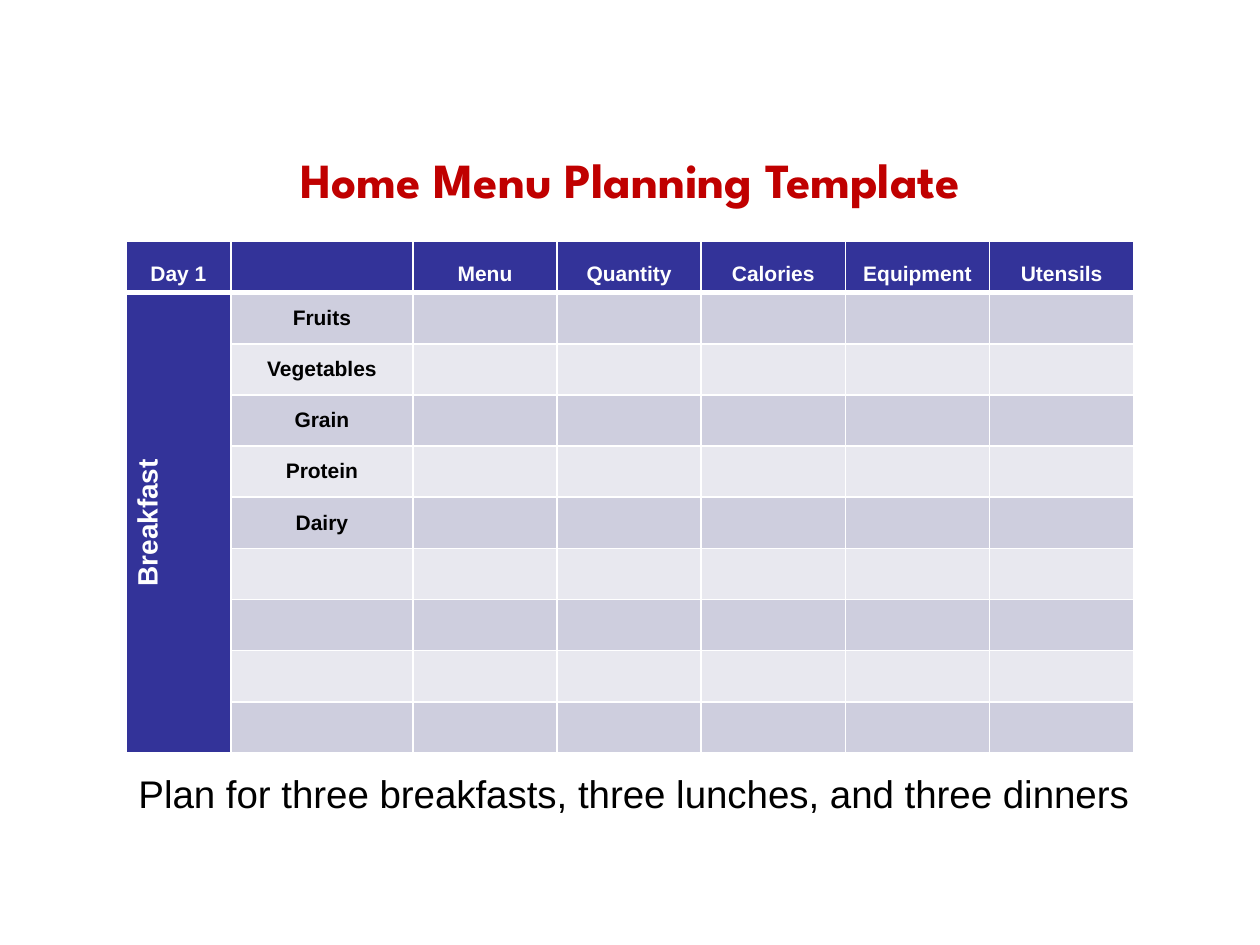
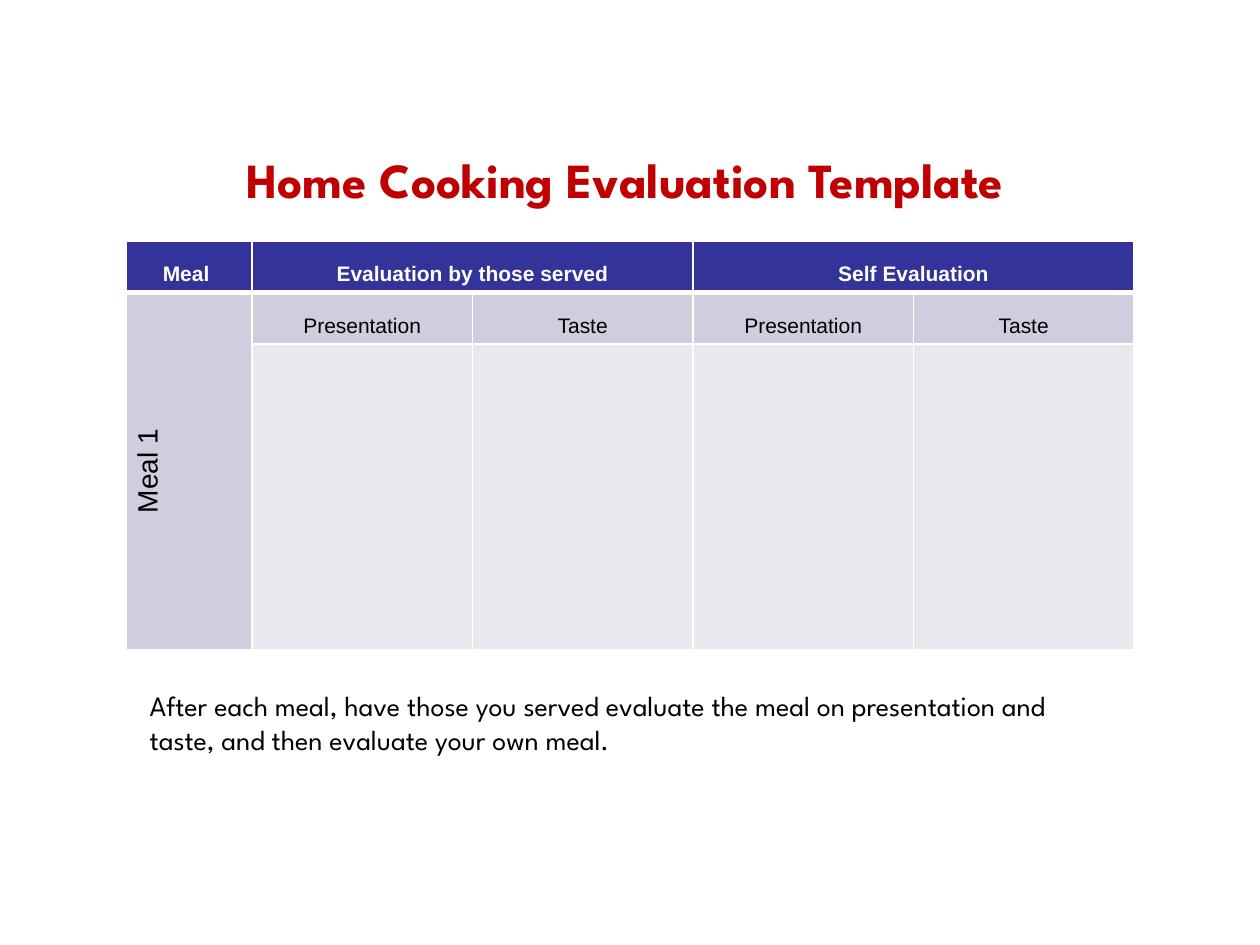
from dataclasses import dataclass

import lxml.etree
import pptx
import pptx.dml.color
import pptx.enum.text
import pptx.oxml.ns
import pptx.presentation
import pptx.slide
import pptx.table
import pptx.text.text
import pptx.util

Pt = pptx.util.Pt
RGBColor = pptx.dml.color.RGBColor
Anchor = pptx.enum.text.MSO_ANCHOR
Align = pptx.enum.text.PP_ALIGN

WHITE = RGBColor(0xFF, 0xFF, 0xFF)
BLACK = RGBColor(0, 0, 0)
TITLE_RED = RGBColor(0xC0, 0, 0)
HEADING_NAVY = RGBColor(0x33, 0x33, 0x99)
BANDS = (RGBColor(0xE8, 0xE8, 0xEF), RGBColor(0xCE, 0xCE, 0xDE))

TITLE_FONT = "League Spartan"
TABLE_FONT = "Arial"
TITLE_TOP, TITLE_HEIGHT = 72, 60
TABLE_LEFT, TABLE_TOP = 72, 138
ROW_HEIGHT = 29.25
THIN_RULE, HEADING_RULE = 1, 3


@dataclass(frozen=True)
class TextStyle:
    size: float
    color: RGBColor
    font: str = TABLE_FONT
    bold: bool = False


@dataclass(frozen=True)
class Box:
    left: float
    top: float
    width: float
    height: float


@dataclass(frozen=True)
class Span:
    """A merged block of cells, from its first to its last (row, column)."""
    first: tuple[int, int]
    last: tuple[int, int]


@dataclass(frozen=True)
class Template:
    title: str
    title_left: float
    title_width: float
    columns: list[float]
    row_heights: list[float]
    rows: list[list[str]]
    spans: list[Span]
    side_is_heading: bool
    body_anchor: Anchor
    caption: str
    caption_box: Box
    caption_style: TextStyle


TITLE_STYLE = TextStyle(28, TITLE_RED, TITLE_FONT, True)

TEMPLATES = [
    Template(
        title="Home Menu Planning Template",
        title_left=120,
        title_width=480,
        columns=[60, 104] + [82.4] * 5,
        row_heights=[ROW_HEIGHT] * 10,
        rows=[
            ["Day 1", "", "Menu", "Quantity", "Calories", "Equipment", "Utensils"],
            ["Breakfast", "Fruits"],
            ["", "Vegetables"],
            ["", "Grain"],
            ["", "Protein"],
            ["", "Dairy"],
        ],
        spans=[Span((1, 0), (9, 0))],
        side_is_heading=True,
        body_anchor=Anchor.MIDDLE,
        caption="Plan for three breakfasts, three lunches, and three dinners",
        caption_box=Box(72, 436.5, 588, 34),
        caption_style=TextStyle(22, BLACK),
    ),
    Template(
        title="Home Cooking Evaluation Template",
        title_left=78.5,
        title_width=557,
        columns=[72] + [126] * 4,
        row_heights=[ROW_HEIGHT, ROW_HEIGHT, 174.75],
        rows=[
            ["Meal ", "Evaluation by those served", "", "Self Evaluation"],
            ["Meal 1"] + ["Presentation", "Taste"] * 2,
        ],
        spans=[Span((0, 1), (0, 2)), Span((0, 3), (0, 4)), Span((1, 0), (2, 0))],
        side_is_heading=False,
        body_anchor=Anchor.BOTTOM,
        caption="After each meal, have those you served evaluate the meal on "
                "presentation and taste, and then evaluate your own meal.",
        caption_box=Box(78.5, 390, 557, 46),
        caption_style=TextStyle(16, BLACK, TITLE_FONT),
    ),
]


def write(frame: pptx.text.text.TextFrame, text: str, style: TextStyle,
          alignment: Align = Align.LEFT) -> None:
    paragraph = frame.paragraphs[0]
    paragraph.alignment = alignment
    run = paragraph.add_run()
    run.text = text
    run.font.name = style.font
    run.font.size = Pt(style.size)
    run.font.bold = style.bold
    run.font.color.rgb = style.color


def place(shape, box: Box) -> None:
    shape.left, shape.top = Pt(box.left), Pt(box.top)
    shape.width, shape.height = Pt(box.width), Pt(box.height)


def add_borders(cell: pptx.table._Cell, top: float, bottom: float) -> None:
    """Draw white borders; call before filling, as the schema wants lines first."""
    properties = cell._tc.get_or_add_tcPr()
    widths = {"a:lnL": THIN_RULE, "a:lnR": THIN_RULE, "a:lnT": top, "a:lnB": bottom}
    for tag, width in widths.items():
        line = lxml.etree.SubElement(properties, pptx.oxml.ns.qn(tag), w=str(Pt(width)))
        fill = lxml.etree.SubElement(line, pptx.oxml.ns.qn("a:solidFill"))
        lxml.etree.SubElement(fill, pptx.oxml.ns.qn("a:srgbClr"), val=str(WHITE))


def format_cell(cell: pptx.table._Cell, row: int, column: int, text: str,
                template: Template) -> None:
    is_header = row == 0
    is_side = column == 0 and not is_header
    is_heading = is_header or (is_side and template.side_is_heading)
    add_borders(cell,
                top=HEADING_RULE if row == 1 else THIN_RULE,
                bottom=HEADING_RULE if is_header else THIN_RULE)
    cell.fill.solid()
    band = BANDS[1] if is_side else BANDS[row % 2]
    cell.fill.fore_color.rgb = HEADING_NAVY if is_heading else band
    if is_header:
        cell.vertical_anchor = Anchor.BOTTOM
    else:
        cell.vertical_anchor = Anchor.MIDDLE if is_side else template.body_anchor
    if is_side and text:
        cell._tc.get_or_add_tcPr().set("vert", "vert270")
    if text:
        style = TextStyle(16 if is_side else 12, WHITE if is_heading else BLACK,
                          bold=is_header or template.side_is_heading)
        write(cell.text_frame, text, style, Align.CENTER)


def add_grid(slide: pptx.slide.Slide, template: Template) -> None:
    heights, widths = template.row_heights, template.columns
    table = slide.shapes.add_table(
        len(heights), len(widths), Pt(TABLE_LEFT), Pt(TABLE_TOP),
        Pt(sum(widths)), Pt(sum(heights))).table
    for column, width in zip(table.columns, widths):
        column.width = Pt(width)
    for row, height in zip(table.rows, heights):
        row.height = Pt(height)
    for span in template.spans:
        table.cell(*span.first).merge(table.cell(*span.last))
    texts = {(row, column): text
             for row, line in enumerate(template.rows)
             for column, text in enumerate(line)}
    for row in range(len(heights)):
        for column in range(len(widths)):
            format_cell(table.cell(row, column), row, column,
                        texts.get((row, column), ""), template)


def add_template_slide(presentation: pptx.presentation.Presentation,
                       template: Template) -> None:
    slide = presentation.slides.add_slide(
        presentation.slide_layouts.get_by_name("Title Only"))
    title = slide.shapes.title
    place(title, Box(template.title_left, TITLE_TOP, template.title_width, TITLE_HEIGHT))
    title.text_frame.auto_size = pptx.enum.text.MSO_AUTO_SIZE.NONE
    title.text_frame.vertical_anchor = Anchor.MIDDLE
    write(title.text_frame, template.title, TITLE_STYLE, Align.CENTER)

    add_grid(slide, template)

    box = template.caption_box
    caption = slide.shapes.add_textbox(
        Pt(box.left), Pt(box.top), Pt(box.width), Pt(box.height))
    caption.text_frame.word_wrap = True
    write(caption.text_frame, template.caption, template.caption_style)


def main() -> None:
    presentation = pptx.Presentation()
    presentation.slide_width, presentation.slide_height = Pt(720), Pt(540)
    for template in TEMPLATES:
        add_template_slide(presentation, template)
    presentation.save("out.pptx")


if __name__ == "__main__":
    main()
